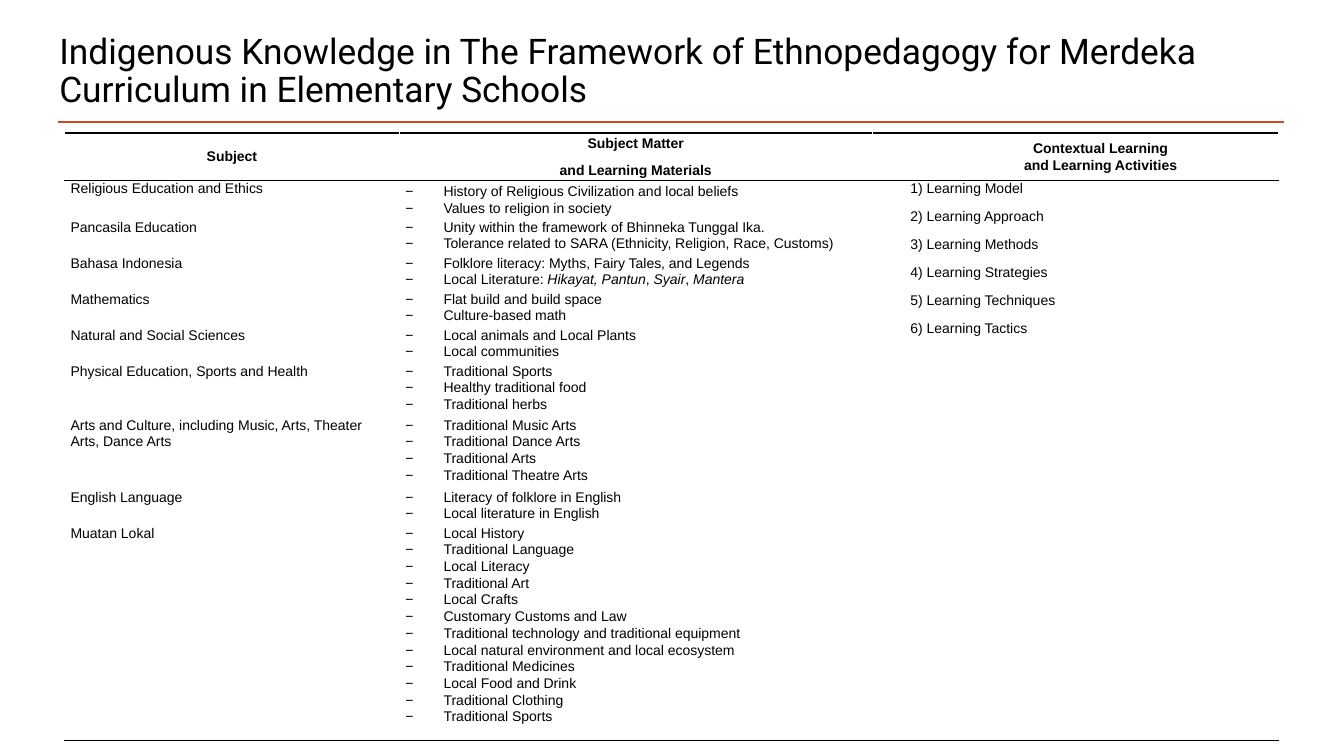
from lxml import etree
from pptx import Presentation
from pptx.dml.color import RGBColor
from pptx.enum.shapes import MSO_CONNECTOR
from pptx.enum.text import MSO_ANCHOR, PP_ALIGN
from pptx.oxml.ns import qn
from pptx.util import Inches, Pt

STRAIGHT = MSO_CONNECTOR.STRAIGHT
TOP, MIDDLE = MSO_ANCHOR.TOP, MSO_ANCHOR.MIDDLE
LEFT, CENTER = PP_ALIGN.LEFT, PP_ALIGN.CENTER
BLACK, RED = "000000", "D24726"

TITLE = ("Indigenous Knowledge in The Framework of Ethnopedagogy for Merdeka "
         "Curriculum in Elementary Schools")
HEADERS = [
    ["Subject"],
    ["Subject Matter", "and Learning Materials"],
    ["Contextual Learning", "and Learning Activities"],
]
SUBJECTS = [
    ("Religious Education and Ethics", [
        "History of Religious Civilization and local beliefs",
        "Values to religion in society"]),
    ("Pancasila Education", [
        "Unity within the framework of Bhinneka Tunggal Ika.",
        "Tolerance related to SARA (Ethnicity, Religion, Race, Customs)"]),
    ("Bahasa Indonesia", [
        "Folklore literacy: Myths, Fairy Tales, and Legends",
        "Local Literature: *Hikayat, Pantun*, *Syair*, *Mantera*"]),
    ("Mathematics", ["Flat build and build space", "Culture-based math"]),
    ("Natural and Social Sciences", [
        "Local animals and Local Plants", "Local communities"]),
    ("Physical Education, Sports and Health", [
        "Traditional Sports", "Healthy traditional food", "Traditional herbs"]),
    ("Arts and Culture, including Music, Arts, Theater Arts, Dance Arts", [
        "Traditional Music Arts", "Traditional Dance Arts",
        "Traditional Arts", "Traditional Theatre Arts"]),
    ("English Language", [
        "Literacy of folklore in English", "Local literature in English"]),
    ("Muatan Lokal", [
        "Local History", "Traditional Language", "Local Literacy",
        "Traditional Art", "Local Crafts", "Customary Customs and Law",
        "Traditional technology and traditional equipment",
        "Local natural environment and local ecosystem",
        "Traditional Medicines", "Local Food and Drink",
        "Traditional Clothing", "Traditional Sports"]),
]
ACTIVITIES = ["Learning Model", "Learning Approach", "Learning Methods",
              "Learning Strategies", "Learning Techniques", "Learning Tactics"]

COLUMN_WIDTHS = [3.32, 4.69, 4.03]
ROW_HEIGHTS = [0.36, 0.38, 0.26, 0.35, 0.25, 0.25, 0.38, 0.51, 0.25, 1.79]
TABLE_LEFT, TABLE_TOP = 0.64, 1.32
HEADER_INDENT, ACTIVITY_INDENT, BULLET_INDENT = 0.5, 0.32, 0.38


def color(value):
    return RGBColor.from_string(value)


def style_font(font, name, size):
    font.name, font.size = name, Pt(size)
    font.color.rgb = color(BLACK)


def indent(para, margin, bullet=None):
    properties = para._p.get_or_add_pPr()
    properties.set("marL", str(Inches(margin)))
    properties.set("indent", str(-Inches(margin) if bullet else 0))
    if bullet:
        etree.SubElement(properties, qn("a:buFont"), typeface="Arial")
        etree.SubElement(properties, qn("a:buChar"), char=bullet)


def write_cell(cell, lines, align=LEFT, anchor=TOP, bold=False, margin=0,
               bullet=None, spaced=False):
    cell.vertical_anchor = anchor
    cell.margin_left = cell.margin_right = Inches(0.06)
    cell.margin_top = cell.margin_bottom = 0
    frame = cell.text_frame
    for index, line in enumerate(lines):
        para = frame.paragraphs[0] if index == 0 else frame.add_paragraph()
        para.alignment, para.line_spacing = align, 1.07
        last = index == len(lines) - 1
        para.space_after = Pt(8 if spaced or last else 0)
        style_font(para.font, "Arial", 10)
        para.font.bold = bold
        indent(para, margin, bullet)
        for part, words in enumerate(line.split("*")):
            if words:
                span = para.add_run()
                span.text = words
                style_font(span.font, "Arial", 10)
                span.font.bold = bold
                span.font.italic = part % 2 == 1


def rule_cell(cell, sides):
    properties = cell._tc.get_or_add_tcPr()
    for side in sides:
        border = etree.SubElement(properties, qn("a:ln" + side), w=str(Pt(1)))
        fill = etree.SubElement(border, qn("a:solidFill"))
        etree.SubElement(fill, qn("a:srgbClr"), val=BLACK)
    cell.fill.background()


def add_title(page):
    box = page.shapes.add_textbox(Inches(0.49), Inches(0.26), Inches(12.23), Inches(0.91))
    frame = box.text_frame
    frame.word_wrap, frame.vertical_anchor = True, MIDDLE
    para = frame.paragraphs[0]
    para.text, para.line_spacing = TITLE, 0.9
    style_font(para.font, "Roboto", 25.2)
    style_font(para.runs[0].font, "Roboto", 25.2)


def add_title_rule(page):
    rule = page.shapes.add_connector(
        STRAIGHT, Inches(0.58), Inches(1.21), Inches(12.74), Inches(1.21))
    rule.line.color.rgb, rule.line.width = color(RED), Pt(2)
    etree.SubElement(rule._element.spPr, qn("a:effectLst"))


def add_subject_table(page):
    table = page.shapes.add_table(
        len(ROW_HEIGHTS), len(COLUMN_WIDTHS), Inches(TABLE_LEFT), Inches(TABLE_TOP),
        Inches(sum(COLUMN_WIDTHS)), Inches(sum(ROW_HEIGHTS))).table
    table.first_row = table.horz_banding = False
    for column, width in zip(table.columns, COLUMN_WIDTHS):
        column.width = Inches(width)
    for row, height in zip(table.rows, ROW_HEIGHTS):
        row.height = Inches(height)

    last_row = len(SUBJECTS)
    activities = table.cell(1, 2)
    activities.merge(table.cell(last_row, 2))

    for column, lines in enumerate(HEADERS):
        write_cell(table.cell(0, column), lines, CENTER, MIDDLE, bold=True,
                   margin=HEADER_INDENT if column == 2 else 0, spaced=column == 1)
    for row, (subject, materials) in enumerate(SUBJECTS, 1):
        write_cell(table.cell(row, 0), [subject])
        write_cell(table.cell(row, 1), materials, anchor=MIDDLE if row == 1 else TOP,
                   margin=BULLET_INDENT, bullet="−")
    numbered = [f"{number}) {name}" for number, name in enumerate(ACTIVITIES, 1)]
    write_cell(activities, numbered, margin=ACTIVITY_INDENT, spaced=True)

    for row in range(last_row + 1):
        for column in range(len(HEADERS)):
            cell = table.cell(row, column)
            closing = row == last_row or cell.is_merge_origin
            sides = "TB" if row == 0 else ("T" if row == 1 else "") + ("B" if closing else "")
            rule_cell(cell, sides)


def main():
    deck = Presentation()
    deck.slide_width, deck.slide_height = Inches(13.33), Inches(7.5)
    page = deck.slides.add_slide(deck.slide_layouts[6])
    add_title_rule(page)
    add_title(page)
    add_subject_table(page)
    deck.save("out.pptx")


if __name__ == "__main__":
    main()
